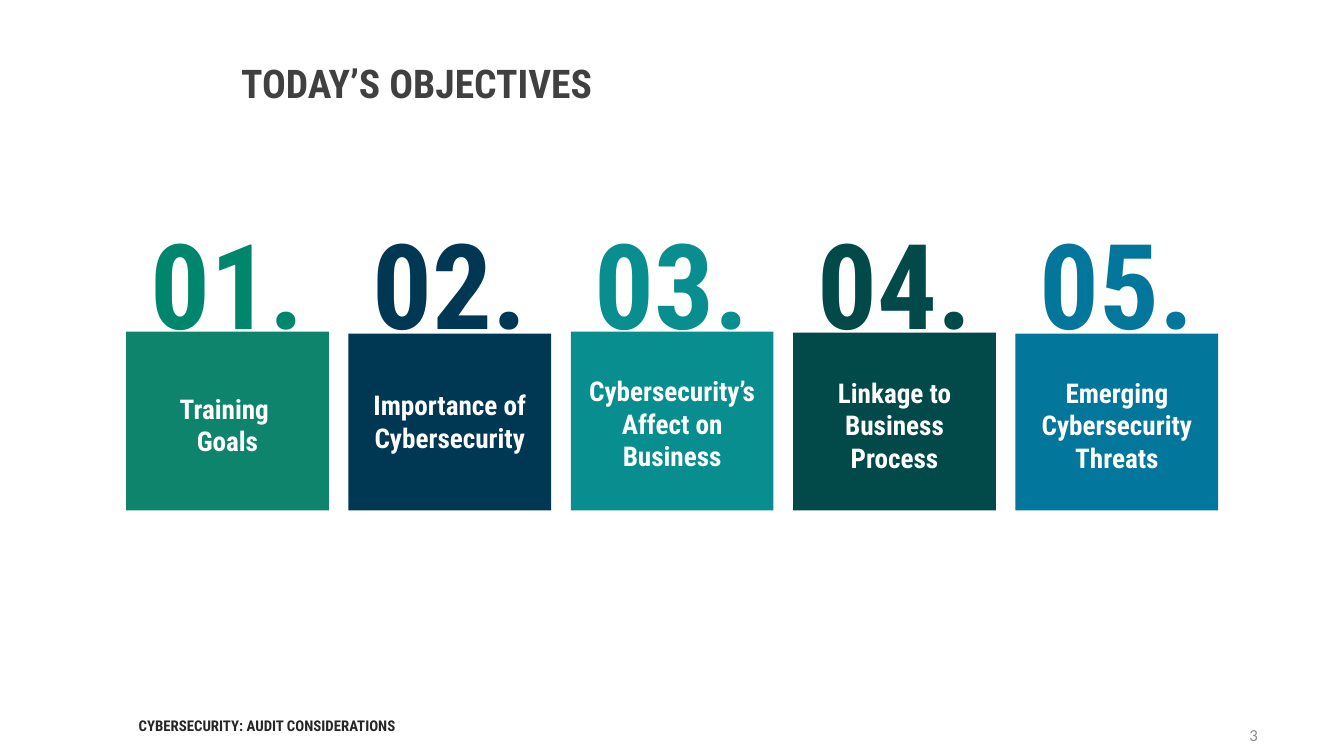
from pptx import Presentation
from pptx.dml.color import RGBColor
from pptx.enum.shapes import MSO_SHAPE
from pptx.enum.text import MSO_ANCHOR, PP_ALIGN
from pptx.util import Cm, Pt

GREEN = RGBColor(0x0F, 0x84, 0x6D)
BRIGHT_GREEN = RGBColor(0x00, 0x86, 0x6D)
NAVY = RGBColor(0x00, 0x38, 0x54)
TEAL = RGBColor(0x08, 0x8E, 0x8E)
DARK_TEAL = RGBColor(0x02, 0x4A, 0x4A)
BLUE = RGBColor(0x03, 0x77, 0x9B)
WHITE = RGBColor(0xFF, 0xFF, 0xFF)
TITLE_GRAY = RGBColor(0x40, 0x40, 0x40)
FOOTER_GRAY = RGBColor(0x26, 0x26, 0x26)
NUMBER_GRAY = RGBColor(0x8C, 0x8C, 0x8C)
FONT = "Roboto Condensed"


def write(sp, text, size, color, align, anchor=MSO_ANCHOR.TOP, font=FONT, bold=True):
    tf = sp.text_frame
    tf.word_wrap = True
    tf.vertical_anchor = anchor
    p = tf.paragraphs[0]
    p.text = text
    p.alignment = align
    p.font.name = font
    p.font.size = Pt(size)
    p.font.bold = bold
    p.font.color.rgb = color


def add_text(left, top, width, height, *style):
    sp = s.shapes.add_textbox(Cm(left), Cm(top), Cm(width), Cm(height))
    write(sp, *style)


prs = Presentation()
prs.slide_width = Cm(38.38)
prs.slide_height = Cm(21.59)
s = prs.slides.add_slide(prs.slide_layouts[5])

title = s.shapes.title
title.left, title.top, title.width, title.height = Cm(6.63), Cm(1.55), Cm(28.3), Cm(1.63)
write(title, "TODAY’S OBJECTIVES", 32, TITLE_GRAY, PP_ALIGN.LEFT)

objectives = [
    ("Training \vGoals", GREEN, BRIGHT_GREEN, 9.47, 11.07, 2.13),
    ("Importance of\vCybersecurity", NAVY, NAVY, 9.53, 10.97, 2.13),
    ("Cybersecurity’s Affect on Business", TEAL, TEAL, 9.47, 10.57, 3.07),
    ("Linkage to Business Process", DARK_TEAL, DARK_TEAL, 9.5, 10.62, 3.07),
    ("Emerging Cybersecurity Threats", BLUE, BLUE, 9.53, 10.62, 3.07),
]
card_left, card_width, card_bottom, pitch = 3.6, 5.79, 14.58, 6.35

for i, (label, fill, number_color, card_top, label_top, label_height) in enumerate(objectives):
    left = card_left + i * pitch
    card = s.shapes.add_shape(MSO_SHAPE.RECTANGLE, Cm(left), Cm(card_top),
                              Cm(card_width), Cm(card_bottom - card_top))
    card.shadow.inherit = False
    card.fill.solid()
    card.fill.fore_color.rgb = fill
    card.line.fill.background()
    add_text(left, label_top, card_width, label_height, label, 22, WHITE, PP_ALIGN.CENTER)
    add_text(left, 5.91, card_width, 4.37, f"{i + 1:02}.", 96, number_color, PP_ALIGN.CENTER)

add_text(3.71, 20.14, 8.64, 1.14, "CYBERSECURITY: AUDIT CONSIDERATIONS", 12, FOOTER_GRAY,
         PP_ALIGN.LEFT, MSO_ANCHOR.MIDDLE)
add_text(27.53, 20.42, 8.64, 1.14, "3", 13.6, NUMBER_GRAY,
         PP_ALIGN.RIGHT, MSO_ANCHOR.MIDDLE, "Calibri", False)

prs.save("out.pptx")
